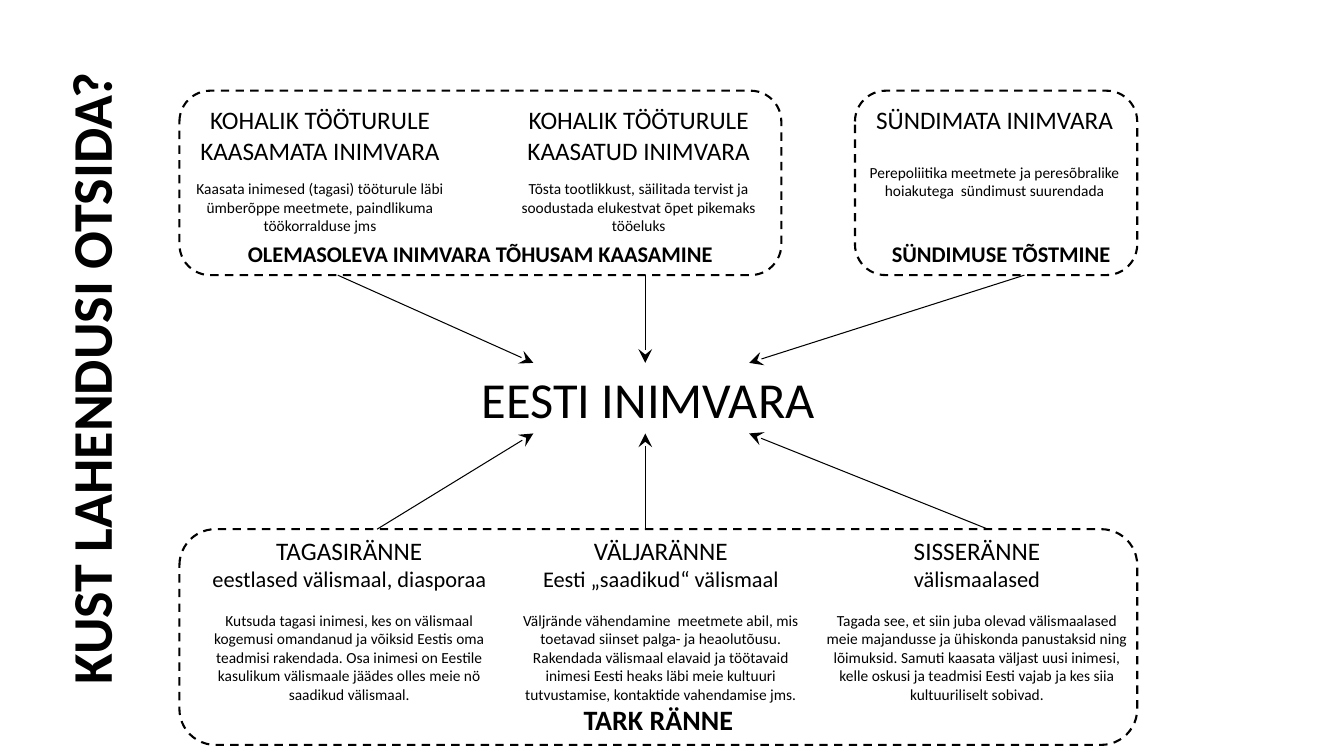
from dataclasses import dataclass

from lxml import etree
from pptx import Presentation, util as u
from pptx.dml.color import RGBColor
from pptx.enum import dml, shapes, text
from pptx.oxml.ns import qn

PX = 9144


@dataclass(frozen=True)
class Theme:
    """Colours, font and type sizes of the slide."""
    ink: RGBColor = RGBColor(0, 0, 0)
    font: str = "Calibri"
    title: int = 40
    hub: int = 36
    total: int = 20
    head: int = 18
    sub: int = 16
    body: int = 11
    thin: float = 0.75
    edge: float = 1.5


T = Theme()


def px(*nums):
    """Turn px lengths into EMU."""
    return [u.Emu(n * PX) for n in nums]


def para(par, words, size=T.body, bold=False, gap=0):
    """Fill one centred paragraph."""
    par.alignment = text.PP_ALIGN.CENTER
    par.space_before = u.Pt(gap)
    run = par.add_run()
    run.text = words
    font = run.font
    font.name, font.size, font.bold = T.font, u.Pt(size), bold
    font.color.rgb = T.ink


def write(slide, box, *parts):
    """Add a text box with one paragraph for each (words, format) part."""
    frame = slide.shapes.add_textbox(*px(*box)).text_frame
    frame.word_wrap = True
    for i, (words, form) in enumerate(parts):
        par = frame.add_paragraph() if i else frame.paragraphs[0]
        para(par, words, **form)


def title(slide, box, words):
    """Turn the title placeholder upright along the left edge."""
    shape = slide.shapes.title
    shape.left, shape.top, shape.width, shape.height = px(*box)
    shape.rotation = 270
    frame = shape.text_frame
    frame.auto_size = text.MSO_AUTO_SIZE.NONE
    frame.vertical_anchor = text.MSO_ANCHOR.TOP
    para(frame.paragraphs[0], words, size=T.title, bold=True)


def panel(slide, box, label, size, drop, cols):
    """Draw a dashed frame with its text columns and bottom label."""
    left, top, width, height = box
    shape = slide.shapes.add_shape(
        shapes.MSO_SHAPE.ROUNDED_RECTANGLE, *px(*box))
    shape.shadow.inherit = False
    shape.fill.background()
    shape.line.color.rgb = T.ink
    shape.line.width = u.Pt(T.edge)
    shape.line.dash_style = dml.MSO_LINE.DASH
    shape.adjustments[0] = 0.167
    for dx, dy, wide, tall, parts in cols:
        write(slide, (left + dx, top + dy, wide, tall), *parts)
    shift, dy = drop
    write(slide, (left + shift, top + dy, width - shift, 37),
          (label, dict(size=size, bold=True)))


def arrow(slide, start, end):
    """Draw a thin arrow from start to end."""
    line = slide.shapes.add_connector(
        shapes.MSO_CONNECTOR.STRAIGHT, *px(*start, *end))
    line.line.color.rgb = T.ink
    line.line.width = u.Pt(T.thin)
    prop = line.line._get_or_add_ln()
    etree.SubElement(prop, qn("a:tailEnd"), type="stealth", w="lg", len="lg")
    etree.SubElement(line._element.spPr, qn("a:effectLst"))


def topic(head, body, gap, sub=None):
    """Return the paragraphs of one column."""
    parts = [(head, dict(size=T.head))]
    if sub:
        parts.append((sub, dict(size=T.sub)))
    return parts + [(body, dict(gap=gap))]


def hub(slide, box, words, tops, lows):
    """Place the central words and the arrows that meet there."""
    left, top, width, height = box
    write(slide, box, (words, dict(size=T.hub)))
    ends = [left + n for n in (130, 241, 344)]
    for starts, y, edge in ((tops, 273, top), (lows, 525, top + 70)):
        for x, end in zip(starts, ends):
            arrow(slide, (x, y), (end, edge))


def main():
    """Build and save the slide."""
    deck = Presentation()
    deck.slide_width, deck.slide_height = px(1333, 750)
    slide = deck.slides.add_slide(deck.slide_layouts[5])
    title(slide, (-274, 337, 726, 77), "KUST LAHENDUSI OTSIDA?")

    panel(slide, (178, 90, 597, 183),
          "OLEMASOLEVA INIMVARA TÕHUSAM KAASAMINE", T.sub, (0, 143), [
              (-2, 9, 283, 140, topic(
                  "KOHALIK TÖÖTURULE KAASAMATA INIMVARA",
                  "Kaasata inimesed (tagasi) tööturule läbi ümberõppe "
                  "meetmete, paindlikuma töökorralduse jms", 10)),
              (314, 9, 283, 140, topic(
                  "KOHALIK TÖÖTURULE KAASATUD INIMVARA",
                  "Tõsta tootlikkust, säilitada tervist ja soodustada "
                  "elukestvat õpet pikemaks tööeluks", 10))])
    panel(slide, (848, 90, 280, 183),
          "SÜNDIMUSE TÕSTMINE", T.sub, (10, 143), [
              (-3, 9, 283, 135, topic(
                  "SÜNDIMATA INIMVARA",
                  "Perepoliitika meetmete ja peresõbralike hoiakutega  "
                  "sündimust suurendada", 20))])
    panel(slide, (178, 525, 950, 214), "TARK RÄNNE", T.total, (0, 167), [
        (15, 1, 307, 180, topic(
            "TAGASIRÄNNE",
            "Kutsuda tagasi inimesi, kes on välismaal kogemusi omandanud ja "
            "võiksid Eestis oma teadmisi rakendada. Osa inimesi on Eestile "
            "kasulikum välismaale jäädes olles meie nö saadikud välismaal.",
            13.4, "eestlased välismaal, diasporaa")),
        (329, 1, 297, 180, topic(
            "VÄLJARÄNNE",
            "Väljrände vähendamine  meetmete abil, mis toetavad siinset "
            "palga- ja heaolutõusu. Rakendada välismaal elavaid ja töötavaid "
            "inimesi Eesti heaks läbi meie kultuuri tutvustamise, kontaktide "
            "vahendamise jms.", 13.4, "Eesti „saadikud“ välismaal")),
        (632, 1, 318, 180, topic(
            "SISSERÄNNE",
            "Tagada see, et siin juba olevad välismaalased meie majandusse "
            "ja ühiskonda panustaksid ning lõimuksid. Samuti kaasata väljast "
            "uusi inimesi, kelle oskusi ja teadmisi Eesti vajab ja kes siia "
            "kultuuriliselt sobivad.", 13.4, "välismaalased"))])
    hub(slide, (399, 360, 488, 71), "EESTI INIMVARA",
        (335, 640, 1016), (374, 640, 980))
    deck.save("out.pptx")


if __name__ == "__main__":
    main()
